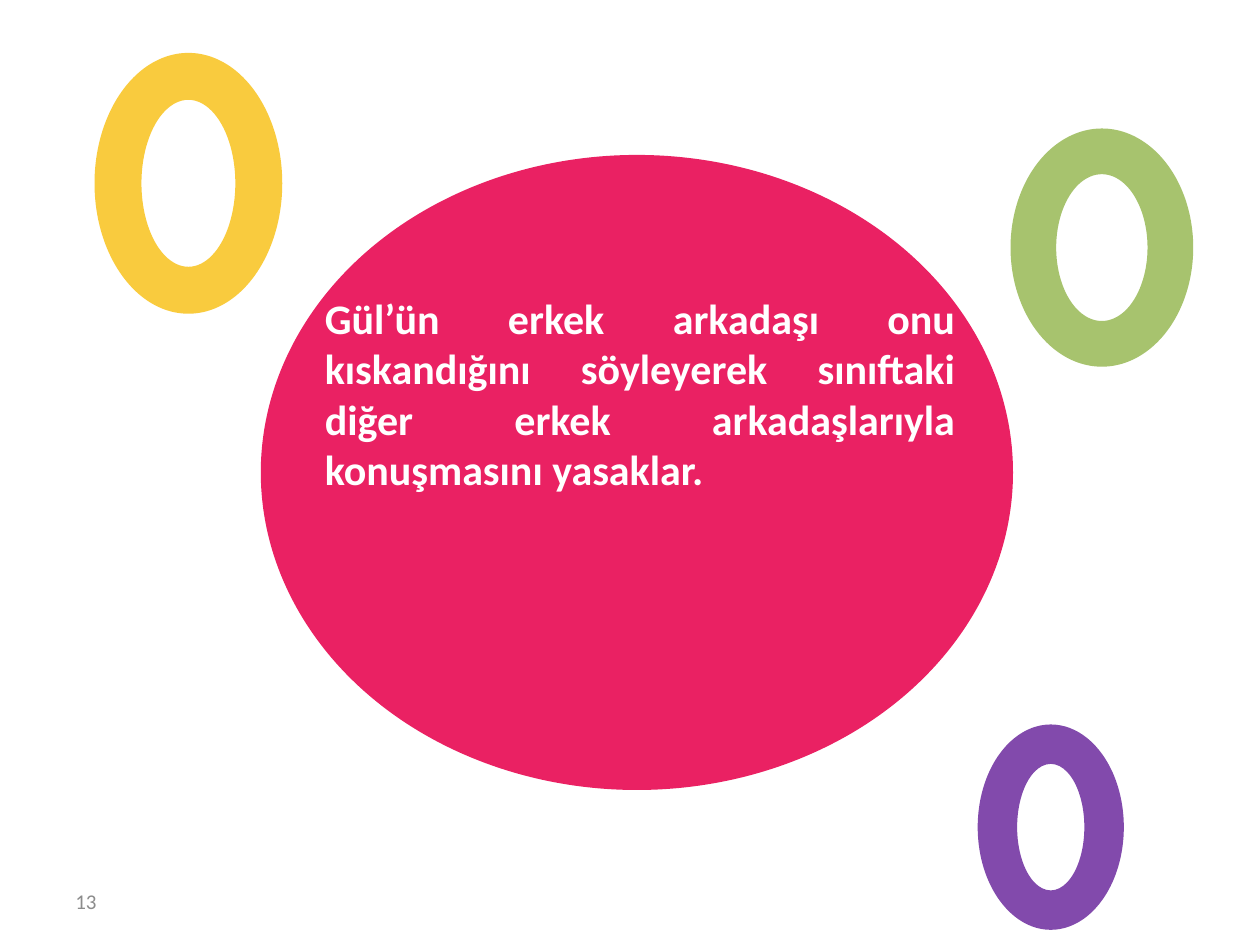
from lxml import etree
from pptx import Presentation
from pptx.dml.color import RGBColor
from pptx.enum.shapes import MSO_SHAPE
from pptx.enum.text import MSO_ANCHOR, PP_ALIGN
from pptx.oxml.ns import qn
from pptx.util import Inches, Pt

ELLIPSE, DONUT = MSO_SHAPE.OVAL, MSO_SHAPE.DONUT
TOP, MIDDLE = MSO_ANCHOR.TOP, MSO_ANCHOR.MIDDLE
LEFT, JUSTIFY = PP_ALIGN.LEFT, PP_ALIGN.JUSTIFY
COLORS = {"pink": "E8004C", "purple": "7030A0", "green": "9BBB59",
          "yellow": "F9C422", "white": "FFFFFF", "gray": "8C8C8C"}
OPACITY = "87000"

deck = Presentation()
deck.slide_width, deck.slide_height = Inches(10), Inches(7.5)
slide = deck.slides.add_slide(deck.slide_layouts[6])

# The slide is a grid of 100 columns by 75 rows
column = deck.slide_width / 100
row = deck.slide_height / 75


def place(left, top, width, height):
    return [round(left * column), round(top * row),
            round(width * column), round(height * row)]


def add_text(area, text, size, color, bold, align, anchor):
    box = slide.shapes.add_textbox(*place(*area))
    frame = box.text_frame
    frame.word_wrap = True
    frame.vertical_anchor = anchor
    frame.margin_top = frame.margin_bottom = Inches(0.1)
    para = frame.paragraphs[0]
    para.alignment = align
    span = para.add_run()
    span.text = text
    span.font.name = "Calibri"
    span.font.size = Pt(size)
    span.font.bold = bold
    span.font.color.rgb = RGBColor.from_string(COLORS[color])


# Central disc and the rings around it: kind, area, ring thickness, color
rounds = [
    (ELLIPSE, (20.7, 12.3, 59.7, 50.4), None, "pink"),
    (DONUT, (77.6, 57.5, 11.6, 16.3), 0.27, "purple"),
    (DONUT, (80.2, 10.2, 14.5, 18.9), 0.25, "green"),
    (DONUT, (7.5, 4.2, 14.9, 20.7), 0.25, "yellow"),
]
for kind, area, thickness, color in rounds:
    shape = slide.shapes.add_shape(kind, *place(*area))
    shape.shadow.inherit = False
    shape.line.fill.background()
    shape.fill.solid()
    shape.fill.fore_color.rgb = RGBColor.from_string(COLORS[color])
    if thickness:
        shape.adjustments[0] = thickness
    tint = shape.fill._xPr.find(qn("a:solidFill"))[0]
    etree.SubElement(tint, qn("a:alpha")).set("val", OPACITY)

# Slide number
add_text((5, 69.5, 23.3, 4), "13", 12, "gray", False, LEFT, MIDDLE)

# Statement on the disc
add_text((24.8, 22.2, 52, 35.7),
         "Gül’ün erkek arkadaşı onu kıskandığını söyleyerek sınıftaki "
         "diğer erkek arkadaşlarıyla konuşmasını yasaklar.",
         24, "white", True, JUSTIFY, TOP)

deck.save("out.pptx")
